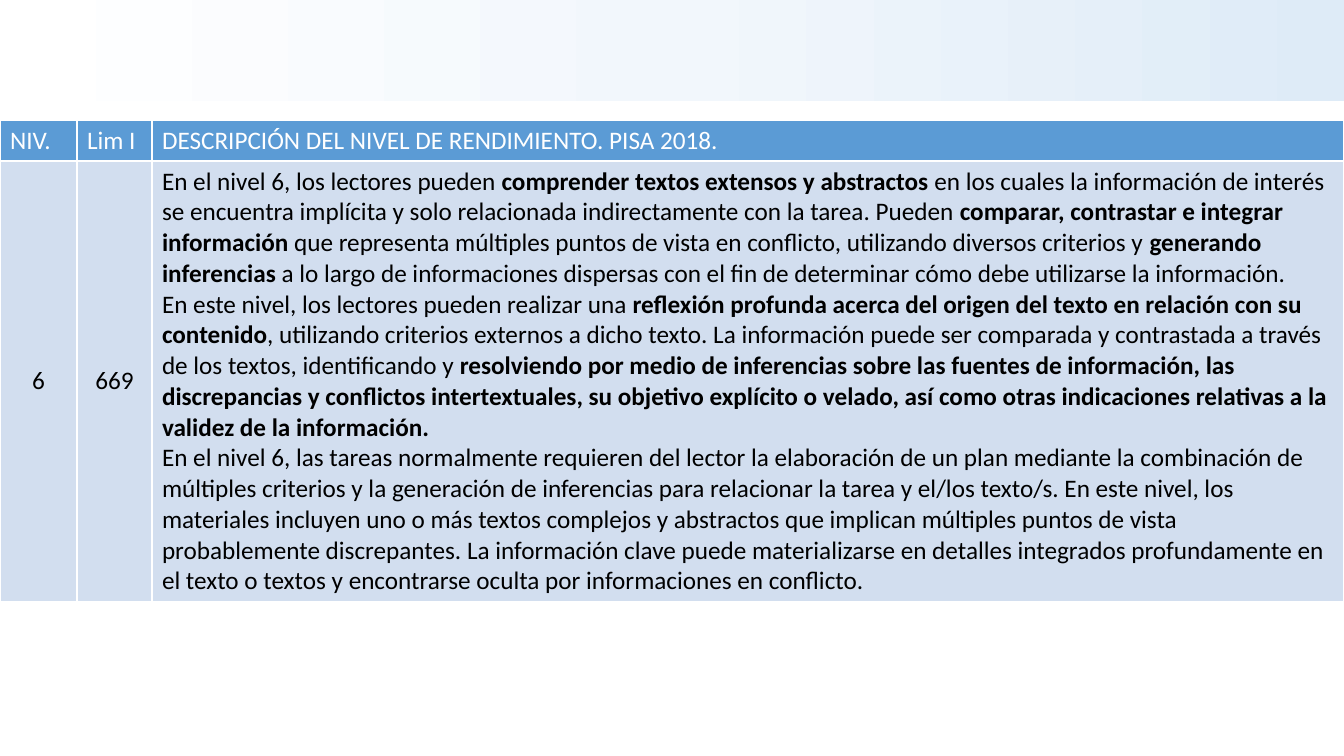
import copy

import lxml.etree
import pptx
import pptx.dml.color
import pptx.enum.shapes
import pptx.enum.text
import pptx.oxml.ns
import pptx.util

WHITE = pptx.dml.color.RGBColor(0xFF, 0xFF, 0xFF)
BLACK = pptx.dml.color.RGBColor(0x00, 0x00, 0x00)
HEADER_BLUE = pptx.dml.color.RGBColor(0x5B, 0x9B, 0xD5)
ROW_BLUE = pptx.dml.color.RGBColor(0xD2, 0xDE, 0xEF)
BANNER_COLOURS = (
    pptx.dml.color.RGBColor(0xDE, 0xEB, 0xF7),
    pptx.dml.color.RGBColor(0xF2, 0xF7, 0xFC),
    WHITE,
)

SLIDE_WIDTH, SLIDE_HEIGHT = 1344, 756
COLUMN_WIDTHS = (77, 75, 1192)
ROW_HEIGHTS = (41, 434)

HEADERS = ("NIV.", "Lim I", "DESCRIPCIÓN DEL NIVEL DE RENDIMIENTO. PISA 2018.")
LEVEL, LOWER_LIMIT = "6", "669"
DESCRIPTION = (
    (
        ("En el nivel 6, los lectores pueden ", False),
        ("comprender textos extensos y abstractos ", True),
        ("en los cuales la información de interés se encuentra implícita y solo "
         "relacionada indirectamente con la tarea. Pueden ", False),
        ("comparar, contrastar e integrar información", True),
        (" que representa múltiples puntos de vista en conflicto, utilizando "
         "diversos criterios y ", False),
        ("generando inferencias ", True),
        ("a lo largo de informaciones dispersas con el fin de determinar cómo "
         "debe utilizarse la información.", False),
    ),
    (
        ("En este nivel, los lectores pueden realizar una ", False),
        ("reflexión profunda acerca del origen del texto en relación con su "
         "contenido", True),
        (", utilizando criterios externos a dicho texto. La información puede ser "
         "comparada y contrastada a través de los textos, identificando y ", False),
        ("resolviendo por medio de inferencias sobre las fuentes de información, "
         "las discrepancias y conflictos intertextuales, su objetivo explícito o "
         "velado, así como otras indicaciones relativas a la validez de la "
         "información.", True),
    ),
    (
        ("En el nivel 6, las tareas normalmente requieren del lector la elaboración "
         "de un plan mediante la combinación de múltiples criterios y la generación "
         "de inferencias para relacionar la tarea y el/los texto/s. En este nivel, "
         "los materiales incluyen uno o más textos complejos y abstractos que "
         "implican múltiples puntos de vista probablemente discrepantes. La "
         "información clave puede materializarse en detalles integrados "
         "profundamente en el texto o textos y encontrarse oculta por informaciones "
         "en conflicto.", False),
    ),
)


def px(length):
    """Turn whole pixels into EMU."""
    return pptx.util.Emu(round(length * 914400 / 100.8))


class SlideBuilder:
    """Holds the text style and the current slide."""

    def __init__(self, slide, font_name="Calibri", font_size=18):
        """Keep the slide and its text style."""
        self.slide = slide
        self.font_name = font_name
        self.font_size = pptx.util.Pt(font_size)

    def banner(self, left, top, width, height, colours):
        """Add a rectangle with evenly spaced gradient stops from the right."""
        shape = self.slide.shapes.add_shape(
            pptx.enum.shapes.MSO_SHAPE.RECTANGLE,
            px(left), px(top), px(width), px(height))
        shape.shadow.inherit = False
        shape.line.fill.background()
        shape.fill.gradient()
        shape.fill.gradient_angle = 180
        stop_list = shape.element.spPr.find(".//" + pptx.oxml.ns.qn("a:gsLst"))
        stop_list.insert(1, copy.deepcopy(stop_list[0]))
        for index, (stop, colour) in enumerate(zip(shape.fill.gradient_stops, colours)):
            stop.position = index / (len(colours) - 1)
            stop.color.rgb = colour

    def table(self, left, top, column_widths, row_heights):
        """Add an unfilled table and return it."""
        table = self.slide.shapes.add_table(
            len(row_heights), len(column_widths), px(left), px(top),
            px(sum(column_widths)), px(sum(row_heights))).table
        for column, width in zip(table.columns, column_widths):
            column.width = px(width)
        for row, height in zip(table.rows, row_heights):
            row.height = px(height)
        return table

    def cell(self, cell, paragraphs, fill, colour, centred=False):
        """Fill, border and write one table cell."""
        self.borders(cell)
        cell.fill.solid()
        cell.fill.fore_color.rgb = fill
        if centred:
            cell.vertical_anchor = pptx.enum.text.MSO_ANCHOR.MIDDLE
        for index, runs in enumerate(paragraphs):
            frame = cell.text_frame
            paragraph = frame.add_paragraph() if index else frame.paragraphs[0]
            if centred:
                paragraph.alignment = pptx.enum.text.PP_ALIGN.CENTER
            for text, bold in runs:
                run = paragraph.add_run()
                run.text = text
                run.font.name = self.font_name
                run.font.size = self.font_size
                run.font.bold = bold
                run.font.color.rgb = colour

    def borders(self, cell):
        """Draw thin white borders around a cell."""
        qn = pptx.oxml.ns.qn
        properties = cell._tc.get_or_add_tcPr()
        for side in ("a:lnL", "a:lnR", "a:lnT", "a:lnB"):
            line = lxml.etree.SubElement(properties, qn(side), w=str(pptx.util.Pt(1)))
            fill = lxml.etree.SubElement(line, qn("a:solidFill"))
            lxml.etree.SubElement(fill, qn("a:srgbClr"), val=str(WHITE))


def main():
    """Build and save the slide."""
    presentation = pptx.Presentation()
    presentation.slide_width = px(SLIDE_WIDTH)
    presentation.slide_height = px(SLIDE_HEIGHT)
    slide = presentation.slides.add_slide(presentation.slide_layouts[6])
    builder = SlideBuilder(slide)
    builder.banner(0, 0, SLIDE_WIDTH, 101, BANNER_COLOURS)
    table = builder.table(0, 120, COLUMN_WIDTHS, ROW_HEIGHTS)
    for column, header in enumerate(HEADERS):
        builder.cell(table.cell(0, column), [[(header, False)]], HEADER_BLUE, WHITE)
    for column, value in enumerate((LEVEL, LOWER_LIMIT)):
        builder.cell(table.cell(1, column), [[(value, False)]], ROW_BLUE, BLACK, True)
    builder.cell(table.cell(1, 2), DESCRIPTION, ROW_BLUE, BLACK)
    presentation.save("out.pptx")


if __name__ == "__main__":
    main()
